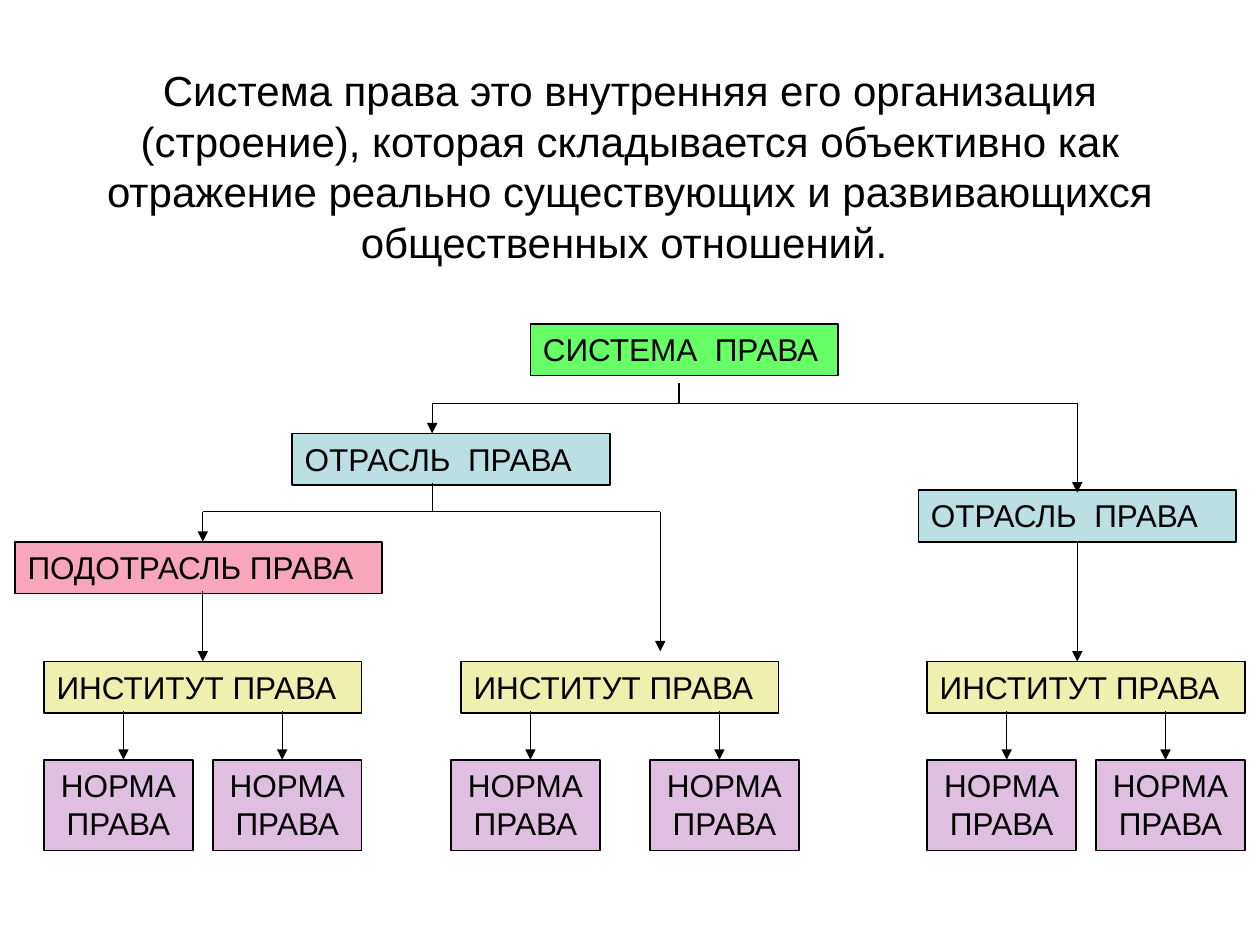
from lxml.etree import SubElement
from pptx import Presentation
from pptx.dml.color import RGBColor
from pptx.enum.shapes import MSO_CONNECTOR
from pptx.enum.text import MSO_ANCHOR, MSO_AUTO_SIZE, PP_ALIGN
from pptx.oxml.ns import qn
from pptx.util import Pt

PX = 9144
SYSTEM, BRANCH, SUBBRANCH = "66FF66", "BBE0E3", "F8A6BB"
INSTITUTE, NORM, INK = "EFEFAF", "DEBFDF", "000000"
BOX_WIDTH, BOX_HEIGHT = 252, 41
NORM_WIDTH, NORM_HEIGHT = 118, 72
NORM_DROP = 78


def px(*lengths):
    """Turn px lengths into EMU."""
    return [length * PX for length in lengths]


def color(hex_code):
    """Turn a hex string into a colour."""
    return RGBColor.from_string(hex_code)


def style_text(paragraph, size, align):
    """Format a paragraph and its runs."""
    paragraph.alignment = align
    for run in paragraph.runs:
        run.font.name = "Arial"
        run.font.size = Pt(size)
        run.font.color.rgb = color(INK)


def add_title(slide, left, top, width, height, wording):
    """Place the definition in the title placeholder."""
    title = slide.shapes.title
    title.left, title.top, title.width, title.height = px(left, top, width, height)
    frame = title.text_frame
    frame.text = wording
    frame.word_wrap = True
    frame.auto_size = MSO_AUTO_SIZE.NONE
    frame.vertical_anchor = MSO_ANCHOR.MIDDLE
    style_text(frame.paragraphs[0], 24, PP_ALIGN.CENTER)


def add_box(slide, left, top, wording, fill, width=BOX_WIDTH, height=BOX_HEIGHT,
            align=PP_ALIGN.LEFT, wrap=True):
    """Add one outlined, filled text box of the hierarchy."""
    box = slide.shapes.add_textbox(*px(left, top, width, height))
    box.fill.solid()
    box.fill.fore_color.rgb = color(fill)
    box.line.color.rgb = color(INK)
    box.line.width = Pt(1)
    frame = box.text_frame
    frame.text = wording
    frame.word_wrap = wrap
    frame.auto_size = MSO_AUTO_SIZE.SHAPE_TO_FIT_TEXT
    style_text(frame.paragraphs[0], 18, align)


def add_line(slide, x1, y1, x2, y2, arrow=False):
    """Draw a thin line, with an arrowhead at its end if asked."""
    link = slide.shapes.add_connector(MSO_CONNECTOR.STRAIGHT, *px(x1, y1, x2, y2))
    link.line.color.rgb = color(INK)
    link.line.width = Pt(0.75)
    if arrow:
        SubElement(link.line._get_or_add_ln(), qn("a:tailEnd"), type="triangle")
    SubElement(link._element.spPr, qn("a:effectLst"))


def add_fork(slide, stem_x, stem_top, bar_y, drops):
    """Draw a stem, a crossbar and an arrow down to each drop."""
    add_line(slide, stem_x, stem_top, stem_x, bar_y)
    add_line(slide, drops[0][0], bar_y, drops[-1][0], bar_y)
    for x, bottom in drops:
        add_line(slide, x, bar_y, x, bottom, arrow=True)


def add_institute(slide, left, top, norm_offsets=(0, 134)):
    """Add an institute box with its two norms below."""
    add_box(slide, left, top, "ИНСТИТУТ ПРАВА", INSTITUTE)
    norm_top = top + NORM_DROP
    for offset, arrow_offset in zip(norm_offsets, (63, 55)):
        norm_left = left + offset
        add_box(slide, norm_left, norm_top, "НОРМА ПРАВА", NORM,
                NORM_WIDTH, NORM_HEIGHT, PP_ALIGN.CENTER)
        arrow_x = norm_left + arrow_offset
        add_line(slide, arrow_x, top + 39, arrow_x, norm_top, arrow=True)


def main():
    """Build the slide on the system of law."""
    deck = Presentation()
    deck.slide_width, deck.slide_height = px(1000, 750)
    slide = deck.slides.add_slide(deck.slide_layouts[5])

    add_title(slide, 50, 30, 900, 203,
              "Система права это внутренняя его организация (строение), "
              "которая складывается объективно как отражение реально "
              "существующих и развивающихся общественных отношений. ")

    add_box(slide, 421, 257, "СИСТЕМА  ПРАВА", SYSTEM, width=244, wrap=False)
    for left, top in ((232, 344), (729, 389)):
        add_box(slide, left, top, "ОТРАСЛЬ  ПРАВА", BRANCH)
    add_box(slide, 12, 430, "ПОДОТРАСЛЬ ПРАВА", SUBBRANCH, width=291)

    add_institute(slide, 35, 525)
    add_institute(slide, 366, 525, norm_offsets=(-8, 150))
    add_institute(slide, 736, 525)

    add_fork(slide, 539, 304, 320, [(343, 344), (855, 391)])
    add_fork(slide, 343, 383, 406, [(161, 430), (524, 517)])
    for x, top in ((161, 469), (855, 430)):
        add_line(slide, x, top, x, 525, arrow=True)

    deck.save("out.pptx")


if __name__ == "__main__":
    main()
